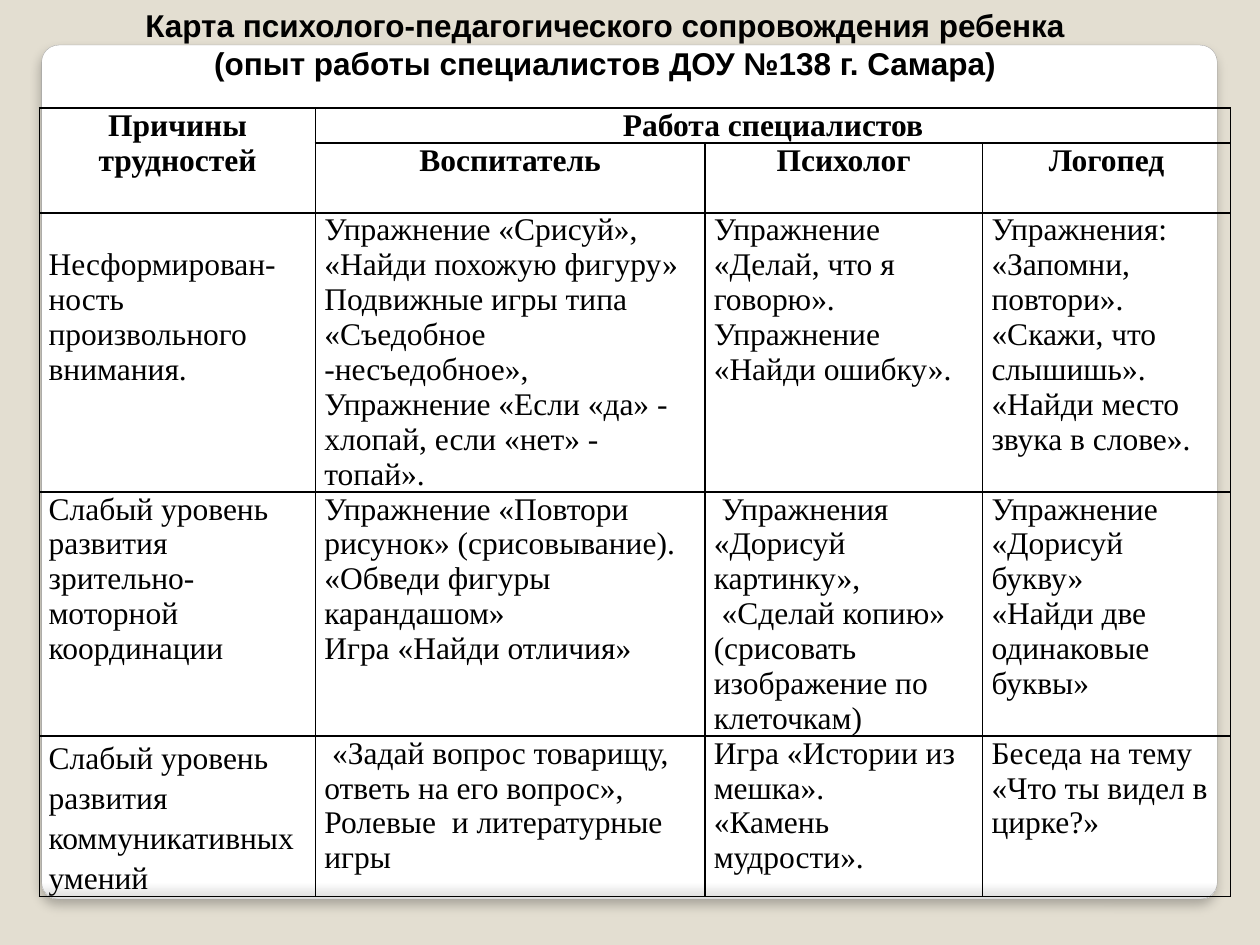
import pptx
import pptx.util
import pptx.dml.color
import pptx.enum.shapes
import pptx.enum.text
import lxml.etree

Cm, Pt = pptx.util.Cm, pptx.util.Pt
ALIGN = pptx.enum.text.PP_ALIGN
NS = "http://schemas.openxmlformats.org/drawingml/2006/main"

# Content: a cell is text, with a line break between paragraphs
TITLE = """Карта психолого-педагогического сопровождения ребенка
(опыт работы специалистов ДОУ №138 г. Самара)"""
ROWS = [
    ["Причины трудностей", "Работа специалистов", "", ""],
    ["", "Воспитатель", "Психолог", "Логопед"],
    ["Несформирован-ность произвольного внимания.",
     "Упражнение «Срисуй», «Найди похожую фигуру»\n"
     "Подвижные игры типа «Съедобное -несъедобное»,\n"
     "Упражнение «Если «да» - хлопай, если «нет» - топай».",
     "Упражнение «Делай, что я говорю».\nУпражнение «Найди ошибку».",
     "Упражнения: «Запомни, повтори».\n"
     "«Скажи, что слышишь». «Найди место звука в слове»."],
    ["Слабый уровень развития зрительно-моторной координации",
     "Упражнение «Повтори рисунок» (срисовывание).\n"
     "«Обведи фигуры карандашом»\nИгра «Найди отличия»",
     " Упражнения «Дорисуй картинку»,\n"
     " «Сделай копию» (срисовать изображение по клеточкам)",
     "Упражнение «Дорисуй букву»\n«Найди две одинаковые буквы»"],
    ["Слабый уровень развития коммуникативных умений",
     " «Задай вопрос товарищу, ответь на его вопрос»,\n"
     "Ролевые  и литературные игры",
     "Игра «Истории из мешка».\n«Камень мудрости».",
     "Беседа на тему «Что ты видел в цирке?»"],
]
WIDTHS = [5.56, 7.85, 5.6, 5]
HEIGHTS = [0.7, 1.4, 5.62, 4.92, 3.23]
HEADS = 2


def color(code):
    return pptx.dml.color.RGBColor.from_string(code)


def style(frame, face, bold, align):
    for para in frame.paragraphs:
        para.alignment = align
        for run in para.runs:
            font = run.font
            font.name, font.size, font.bold = face, Pt(18), bold
            font.color.rgb = color("000000")


def add(root, tag, **attrs):
    return lxml.etree.SubElement(root, f"{{{NS}}}{tag}", attrs)


def border(cell):
    props = cell._tc.get_or_add_tcPr()
    for spot, side in enumerate("LRTB"):
        line = add(props, "ln" + side, w=str(Pt(1)))
        add(add(line, "solidFill"), "srgbClr", val="000000")
        props.insert(spot, line)


deck = pptx.Presentation()
deck.slide_width, deck.slide_height = Cm(25.4), Cm(19.05)
slide = deck.slides.add_slide(deck.slide_layouts[6])
back = slide.background.fill
back.solid()
back.fore_color.rgb = color("E3DED1")

# White panel with a soft shadow
panel = slide.shapes.add_shape(
    pptx.enum.shapes.MSO_SHAPE.ROUNDED_RECTANGLE,
    Cm(0.84), Cm(0.91), Cm(23.7), Cm(17.22))
panel.adjustments[0] = 0.02
panel.fill.gradient()
panel.fill.gradient_angle = 270
for stop, (place, code) in zip(panel.fill.gradient_stops,
                               [(0.98, "FFFFFF"), (1, "DADADA")]):
    stop.position = place
    stop.color.rgb = color(code)
panel.line.color.rgb = color("A4A4A4")
panel.line.width = Pt(0.16)
panel.shadow.inherit = False
effect = panel._element.spPr.find(f"{{{NS}}}effectLst")
shade = add(effect, "outerShdw", blurRad=str(Pt(6)), dist=str(Pt(4)),
            dir="5400000", algn="t", rotWithShape="0")
add(add(shade, "srgbClr", val="000000"), "alpha", val="25000")

# Table
grid = slide.shapes.add_table(
    len(ROWS), len(WIDTHS), Cm(0.8), Cm(2.18),
    Cm(sum(WIDTHS)), Cm(sum(HEIGHTS))).table
grid.first_row = grid.horz_banding = False
for col, width in zip(grid.columns, WIDTHS):
    col.width = Cm(width)
for row, height in zip(grid.rows, HEIGHTS):
    row.height = Cm(height)
grid.cell(0, 0).merge(grid.cell(1, 0))
grid.cell(0, 1).merge(grid.cell(0, 3))

for r, texts in enumerate(ROWS):
    for c, text in enumerate(texts):
        cell = grid.cell(r, c)
        cell.margin_left = cell.margin_right = Cm(0.18)
        cell.margin_top = cell.margin_bottom = 0
        cell.fill.background()
        border(cell)
        if text:
            head = r < HEADS
            cell.text_frame.text = text
            style(cell.text_frame, "Times New Roman", head,
                  ALIGN.CENTER if head else ALIGN.LEFT)

# First column: one lowered cell, one with wider lines
grid.cell(2, 0).margin_top = Cm(0.7)
grid.cell(4, 0).text_frame.paragraphs[0].line_spacing = 1.15

# Title
title = slide.shapes.add_textbox(0, 0, Cm(24.4), Cm(3.33)).text_frame
title.word_wrap = True
title.text = TITLE
style(title, "Arial", True, ALIGN.CENTER)

deck.save("out.pptx")
